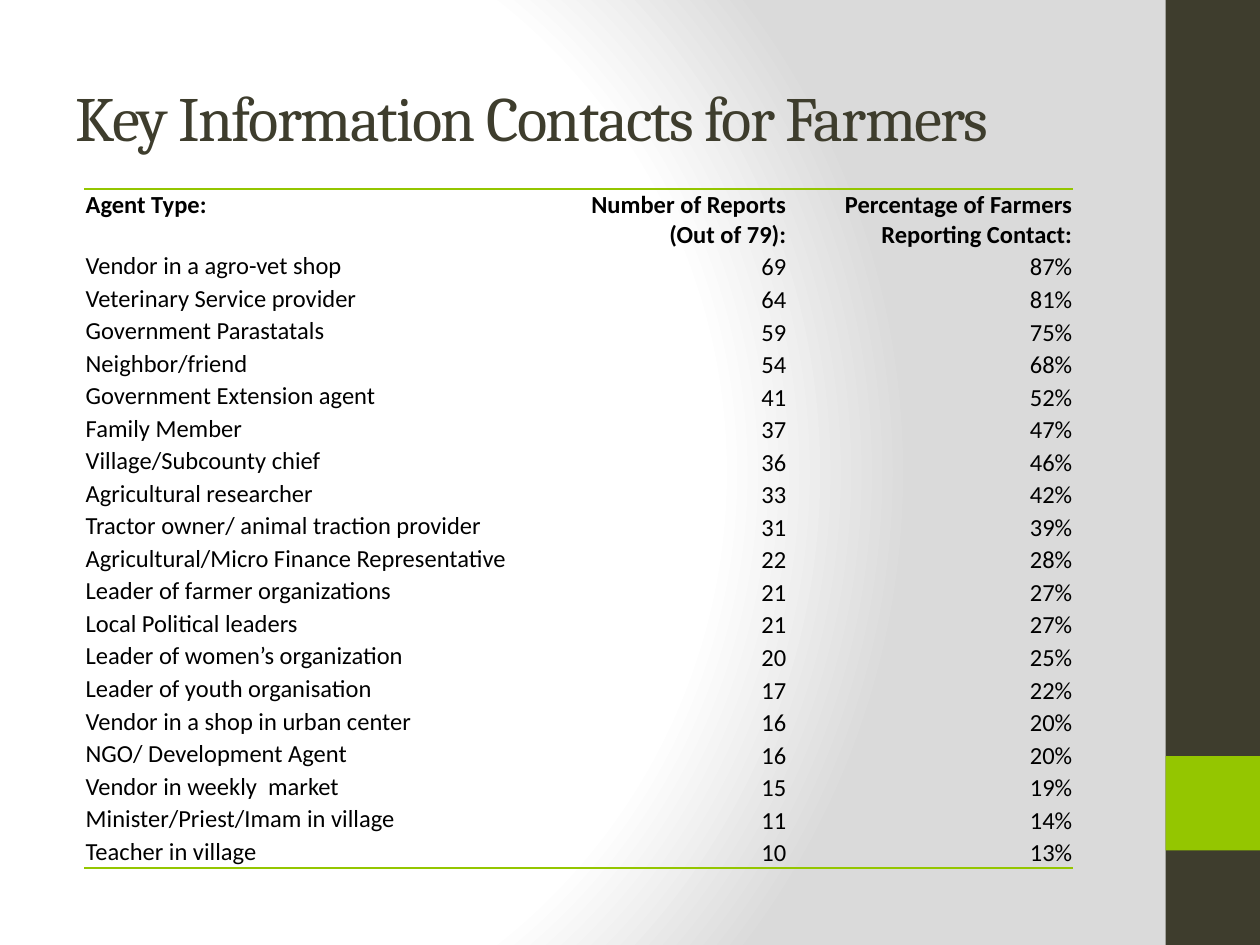
from dataclasses import dataclass

from pptx import Presentation
from pptx.dml.color import RGBColor
from pptx.enum.text import MSO_ANCHOR, PP_ALIGN
from pptx.oxml import parse_xml
from pptx.oxml.ns import nsdecls, qn
from pptx.slide import Slide
from pptx.table import Table, _Cell
from pptx.util import Inches, Pt


@dataclass(frozen=True)
class Theme:
    dark: str = "3E3D2D"
    green: str = "94C600"
    ink: str = "000000"
    light: str = "FFFFFF"
    shade: str = "DADADA"
    head: str = "Cambria"
    body: str = "Calibri"
    title: int = 36
    text: int = 14
    rule: int = 1


@dataclass(frozen=True)
class Band:
    top: float
    height: float
    color: str


@dataclass(frozen=True)
class Agent:
    name: str
    count: int

    def cells(self) -> list[str]:
        return [self.name, str(self.count), f"{self.count / FARMERS:.0%}"]


THEME = Theme()
FARMERS = 79
NO_STYLE = "{2D5ABB26-0587-4C30-8999-92F81FD0307C}"
TITLE = "Key Information Contacts for Farmers"
HEADER = ["Agent Type:", f"Number of Reports (Out of {FARMERS}):",
          "Percentage of Farmers Reporting Contact:"]
WIDTHS = [3.75, 1.83, 2.27]
HEIGHT = 5.39
HEAD_ROW = 0.48
BANDS = [Band(0, 7.5, THEME.dark), Band(6, 0.75, THEME.green)]
AGENTS = [
    Agent("Vendor in a agro-vet shop", 69),
    Agent("Veterinary Service provider", 64),
    Agent("Government Parastatals", 59),
    Agent("Neighbor/friend", 54),
    Agent("Government Extension agent", 41),
    Agent("Family Member", 37),
    Agent("Village/Subcounty chief", 36),
    Agent("Agricultural researcher", 33),
    Agent("Tractor owner/ animal traction provider", 31),
    Agent("Agricultural/Micro Finance Representative", 22),
    Agent("Leader of farmer organizations", 21),
    Agent("Local Political leaders", 21),
    Agent("Leader of women’s organization", 20),
    Agent("Leader of youth organisation", 17),
    Agent("Vendor in a shop in urban center", 16),
    Agent("NGO/ Development Agent", 16),
    Agent("Vendor in weekly  market", 15),
    Agent("Minister/Priest/Imam in village", 11),
    Agent("Teacher in village", 10),
]


def paint_back(slide: Slide) -> None:
    """Fill the background with a radial gradient centred left of the middle."""
    fill = slide.background.fill
    fill.gradient()
    stops = [(0, THEME.light), (75, THEME.light), (100, THEME.shade)]
    marks = "".join(f'<a:gs pos="{pos * 1000}"><a:srgbClr val="{color}"/></a:gs>'
                    for pos, color in stops)
    radial = parse_xml(
        f'<a:gradFill {nsdecls("a")} rotWithShape="1"><a:gsLst>{marks}</a:gsLst>'
        '<a:path path="circle"><a:fillToRect l="20000" t="50000" r="100000" b="50000"/>'
        '</a:path></a:gradFill>')
    props = slide.background._cSld.bg.bgPr
    props.replace(props.find(qn("a:gradFill")), radial)


def add_band(slide: Slide, band: Band) -> None:
    shape = slide.shapes.add_shape(1, Inches(9.25), Inches(band.top),
                                   Inches(0.75), Inches(band.height))
    shape.shadow.inherit = False
    shape.fill.solid()
    shape.fill.fore_color.rgb = RGBColor.from_string(band.color)
    shape.line.fill.background()


def set_title(slide: Slide) -> None:
    title = slide.shapes.title
    title.left, title.top = Inches(0.5), Inches(0.3)
    title.width, title.height = Inches(8.33), Inches(1.25)
    frame = title.text_frame
    frame.text = TITLE
    frame.vertical_anchor = MSO_ANCHOR.MIDDLE
    line = frame.paragraphs[0]
    line.alignment = PP_ALIGN.LEFT
    run = line.runs[0]
    run.font.name, run.font.size = THEME.head, Pt(THEME.title)
    run.font.color.rgb = RGBColor.from_string(THEME.dark)
    run._r.get_or_add_rPr().set("spc", "-100")


def set_cell(cell: _Cell, text: str, bold: bool, right: bool) -> None:
    cell.margin_left = cell.margin_right = cell.margin_top = Inches(0.01)
    cell.margin_bottom = 0
    cell.vertical_anchor = MSO_ANCHOR.BOTTOM if right else MSO_ANCHOR.TOP
    cell.fill.background()
    cell.text_frame.text = text
    line = cell.text_frame.paragraphs[0]
    line.alignment = PP_ALIGN.RIGHT if right else PP_ALIGN.LEFT
    font = line.runs[0].font
    font.name, font.size, font.bold = THEME.body, Pt(THEME.text), bold
    font.color.rgb = RGBColor.from_string(THEME.ink)


def add_rule(cell: _Cell, side: str) -> None:
    """Draw a cell border; side is T for top or B for bottom."""
    border = parse_xml(
        f'<a:ln{side} {nsdecls("a")} w="{Pt(THEME.rule)}"><a:solidFill>'
        f'<a:srgbClr val="{THEME.green}"/></a:solidFill></a:ln{side}>')
    cell._tc.get_or_add_tcPr().insert(0, border)


def size_table(table: Table) -> None:
    for col, width in zip(table.columns, WIDTHS):
        col.width = Inches(width)
    for row in table.rows:
        row.height = Inches((HEIGHT - HEAD_ROW) / len(AGENTS))
    table.rows[0].height = Inches(HEAD_ROW)


def add_agents(slide: Slide) -> None:
    rows = [HEADER] + [agent.cells() for agent in AGENTS]
    table = slide.shapes.add_table(len(rows), len(WIDTHS), Inches(0.67), Inches(1.5),
                                   Inches(sum(WIDTHS)), Inches(HEIGHT)).table
    table._tbl.tblPr.find(qn("a:tableStyleId")).text = NO_STYLE
    table.horz_banding = False
    size_table(table)
    for r, row in enumerate(rows):
        for c, text in enumerate(row):
            set_cell(table.cell(r, c), text, bold=r == 0, right=c > 0)
    for c in range(len(WIDTHS)):
        add_rule(table.cell(0, c), "T")
        add_rule(table.cell(len(rows) - 1, c), "B")


def main() -> None:
    deck = Presentation()
    deck.slide_width, deck.slide_height = Inches(10), Inches(7.5)
    slide = deck.slides.add_slide(deck.slide_layouts[5])
    paint_back(slide)
    for band in BANDS:
        add_band(slide, band)
    set_title(slide)
    add_agents(slide)
    deck.save("out.pptx")


if __name__ == "__main__":
    main()
